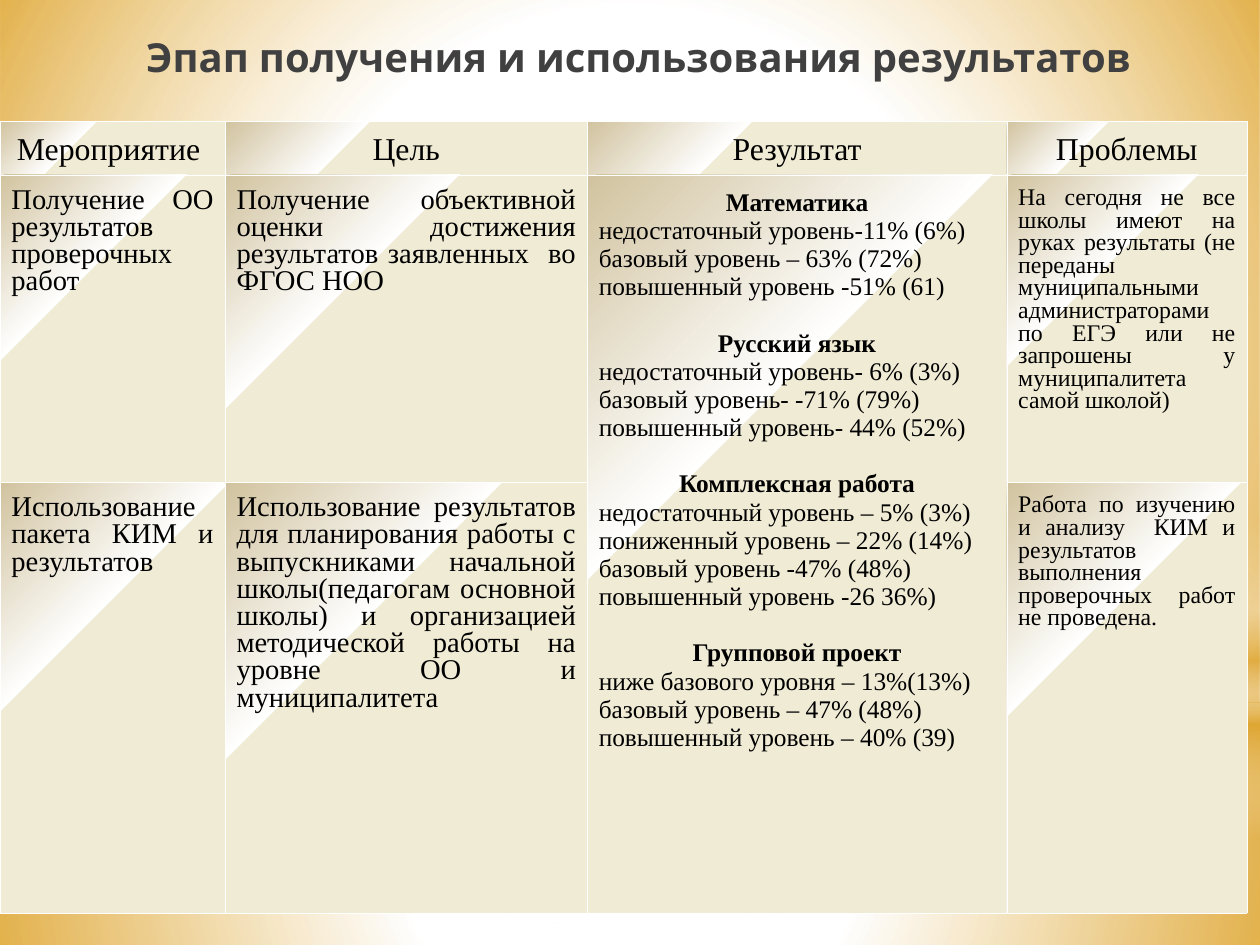
from lxml import etree
from pptx import Presentation
from pptx.dml.color import RGBColor
from pptx.enum.shapes import MSO_SHAPE
from pptx.enum.text import MSO_ANCHOR, MSO_AUTO_SIZE, PP_ALIGN
from pptx.oxml import parse_xml
from pptx.oxml.ns import nsdecls, qn
from pptx.util import Inches, Pt

RECT, OVAL = MSO_SHAPE.RECTANGLE, MSO_SHAPE.OVAL
CENTER, JUSTIFY, LEFT = PP_ALIGN.CENTER, PP_ALIGN.JUSTIFY, PP_ALIGN.LEFT
MIDDLE, TOP = MSO_ANCHOR.MIDDLE, MSO_ANCHOR.TOP
NO_AUTOFIT = MSO_AUTO_SIZE.NONE

BLACK = RGBColor(0x00, 0x00, 0x00)
CHARCOAL = RGBColor(0x40, 0x40, 0x40)
WHITE = RGBColor(0xFF, 0xFF, 0xFF)
GOLD = RGBColor(0xDC, 0x9E, 0x1F)
CREAM = RGBColor(0xF0, 0xEB, 0xD5)
TAN = RGBColor(0xD1, 0xC3, 0x9F)

FROM_CENTER = '<a:path path="circle"><a:fillToRect l="50000" t="50000" r="50000" b="50000"/></a:path>'
FROM_CORNER = '<a:path path="circle"><a:fillToRect l="100000" t="100000"/></a:path>'
DOWNWARD = '<a:lin ang="5400000" scaled="0"/>'
CELL_STOPS = [(65, CREAM, 100), (65, WHITE, 100), (100, TAN, 100)]

HEADERS = ["Мероприятие ", "Цель", "Результат", "Проблемы"]
STAGES = [
    ("Получение ОО результатов проверочных работ",
     "Получение объективной оценки достижения результатов заявленных  во ФГОС НОО",
     "На сегодня не все школы имеют на руках результаты (не переданы муниципальными "
     "администраторами по ЕГЭ или не запрошены у муниципалитета самой школой)"),
    ("Использование пакета КИМ и результатов",
     "Использование результатов для планирования работы с выпускниками начальной "
     "школы(педагогам основной школы) и организацией методической работы на уровне "
     "ОО и муниципалитета",
     "Работа по изучению и анализу  КИМ и результатов выполнения проверочных работ "
     "не проведена."),
]
RESULTS = {
    "Математика": ["недостаточный уровень-11% (6%)", "базовый уровень – 63% (72%)",
                   "повышенный уровень -51% (61)"],
    "Русский язык": ["недостаточный уровень- 6% (3%)", "базовый уровень- -71% (79%)",
                     "повышенный уровень- 44% (52%)"],
    "Комплексная работа": ["недостаточный уровень – 5% (3%)", "пониженный уровень – 22% (14%)",
                           "базовый уровень -47% (48%)", "повышенный уровень -26 36%)"],
    "Групповой проект": ["ниже базового уровня – 13%(13%)", "базовый уровень – 47% (48%)",
                         "повышенный уровень – 40% (39)"],
}


def gradient(stops, direction):
    """Gradient fill element from (position %, colour, opacity %) stops."""
    gs = "".join(
        f'<a:gs pos="{pos * 1000}"><a:srgbClr val="{color}"><a:alpha val="{alpha * 1000}"/>'
        f'</a:srgbClr></a:gs>' for pos, color, alpha in stops)
    return parse_xml(f'<a:gradFill {nsdecls("a")} rotWithShape="1"><a:gsLst>{gs}</a:gsLst>'
                     f'{direction}</a:gradFill>')


class SlideBuilder:
    def __init__(self, prs, font):
        self.slide = prs.slides.add_slide(prs.slide_layouts[5])
        self.width = prs.slide_width
        self.font = font

    def format(self, p, size, color=BLACK, bold=False, font=None):
        for r in p.runs:
            r.font.name = font or self.font
            r.font.size = Pt(size)
            r.font.bold = bold
            r.font.color.rgb = color

    def backdrop(self, kind, top, height, stops, direction):
        sp = self.slide.shapes.add_shape(kind, 0, Inches(top), self.width, Inches(height))
        sp.shadow.inherit = False
        sp.line.fill.background()
        sp.fill.background()
        pr = sp._element.spPr
        pr.replace(pr.find(qn("a:noFill")), gradient(stops, direction))

    def title(self, text, left, top, width, height):
        sp = self.slide.shapes.title
        sp.left, sp.top, sp.width, sp.height = map(Inches, (left, top, width, height))
        self.slide.shapes._spTree.append(sp._element)  # above the backdrop
        tf = sp.text_frame
        tf.text = text
        tf.word_wrap = True
        tf.auto_size = NO_AUTOFIT
        tf.vertical_anchor = MIDDLE
        tf.margin_left = tf.margin_right = Inches(0.11)
        tf.margin_top = tf.margin_bottom = Inches(0.06)
        p = tf.paragraphs[0]
        p.alignment = CENTER
        self.format(p, 25.2, CHARCOAL, True, "Karla")

    def table(self, left, top, widths, heights):
        frame = self.slide.shapes.add_table(len(heights), len(widths), Inches(left), Inches(top),
                                            Inches(sum(widths)), Inches(sum(heights)))
        table = frame.table
        table.first_row = table.horz_banding = False
        for column, width in zip(table.columns, widths):
            column.width = Inches(width)
        for row, height in zip(table.rows, heights):
            row.height = Inches(height)
        for cell in table.iter_cells():
            self.style_cell(cell)
        return table

    def style_cell(self, cell):
        cell.margin_left = cell.margin_right = Inches(0.1)
        cell.margin_bottom = Inches(0.05)
        cell.vertical_anchor = TOP
        pr = cell._tc.get_or_add_tcPr()
        for side in ("lnL", "lnR", "lnT", "lnB"):
            ln = etree.SubElement(pr, qn(f"a:{side}"), w=str(Pt(0.06)))
            fill = etree.SubElement(ln, qn("a:solidFill"))
            etree.SubElement(fill, qn("a:srgbClr"), val=str(WHITE))
        pr.append(gradient(CELL_STOPS, FROM_CORNER))

    def cell_text(self, cell, text, size, align, margin_top):
        cell.margin_top = Inches(margin_top)
        p = cell.text_frame.paragraphs[0]
        p.text = text
        p.alignment = align
        p.line_spacing = 0.86
        self.format(p, size)

    def results(self, cell, groups):
        """Bold centred subject headings, each followed by its levels."""
        cell.margin_top = Inches(0.12)
        tf = cell.text_frame
        for i, (subject, levels) in enumerate(groups.items()):
            p = tf.add_paragraph() if i else tf.paragraphs[0]
            p.text = subject
            p.alignment = CENTER
            if i:
                p.space_before = Pt(17.6)
            self.format(p, 16, bold=True)
            for level in levels:
                p = tf.add_paragraph()
                p.text = level
                p.alignment = LEFT
                self.format(p, 16)


def main():
    prs = Presentation()
    prs.slide_width, prs.slide_height = Pt(793.75), Pt(595.25)
    s = SlideBuilder(prs, "Times New Roman")

    s.backdrop(RECT, 6.15, 2.11, [(0, WHITE, 91), (37, WHITE, 76), (100, GOLD, 79)], FROM_CENTER)
    s.backdrop(RECT, 0, 6.15, [(0, WHITE, 89), (48, WHITE, 62), (100, GOLD, 79)], FROM_CENTER)
    s.backdrop(RECT, 4.54, 2.76, [(0, WHITE, 0), (29, WHITE, 30), (45, GOLD, 40),
                                  (55, WHITE, 26), (65, GOLD, 60), (100, WHITE, 0)], DOWNWARD)
    s.backdrop(OVAL, 1.93, 6.15, [(0, WHITE, 100), (56, WHITE, 0)], FROM_CENTER)

    s.title("Эпап получения и использования результатов", 0.63, 0.2, 9.92, 0.58)

    table = s.table(0, 1.06, [1.97, 3.17, 3.67, 2.1], [0.47, 2.69, 3.77])
    for col, header in enumerate(HEADERS):
        s.cell_text(table.cell(0, col), header, 20, CENTER, 0.13)
    for row, stage in enumerate(STAGES, 1):
        for col, size, text in zip((0, 1, 3), (18, 18, 15), stage):
            s.cell_text(table.cell(row, col), text, size, JUSTIFY, 0.11)
    table.cell(1, 2).merge(table.cell(2, 2))
    s.results(table.cell(1, 2), RESULTS)

    prs.save("out.pptx")


if __name__ == "__main__":
    main()
